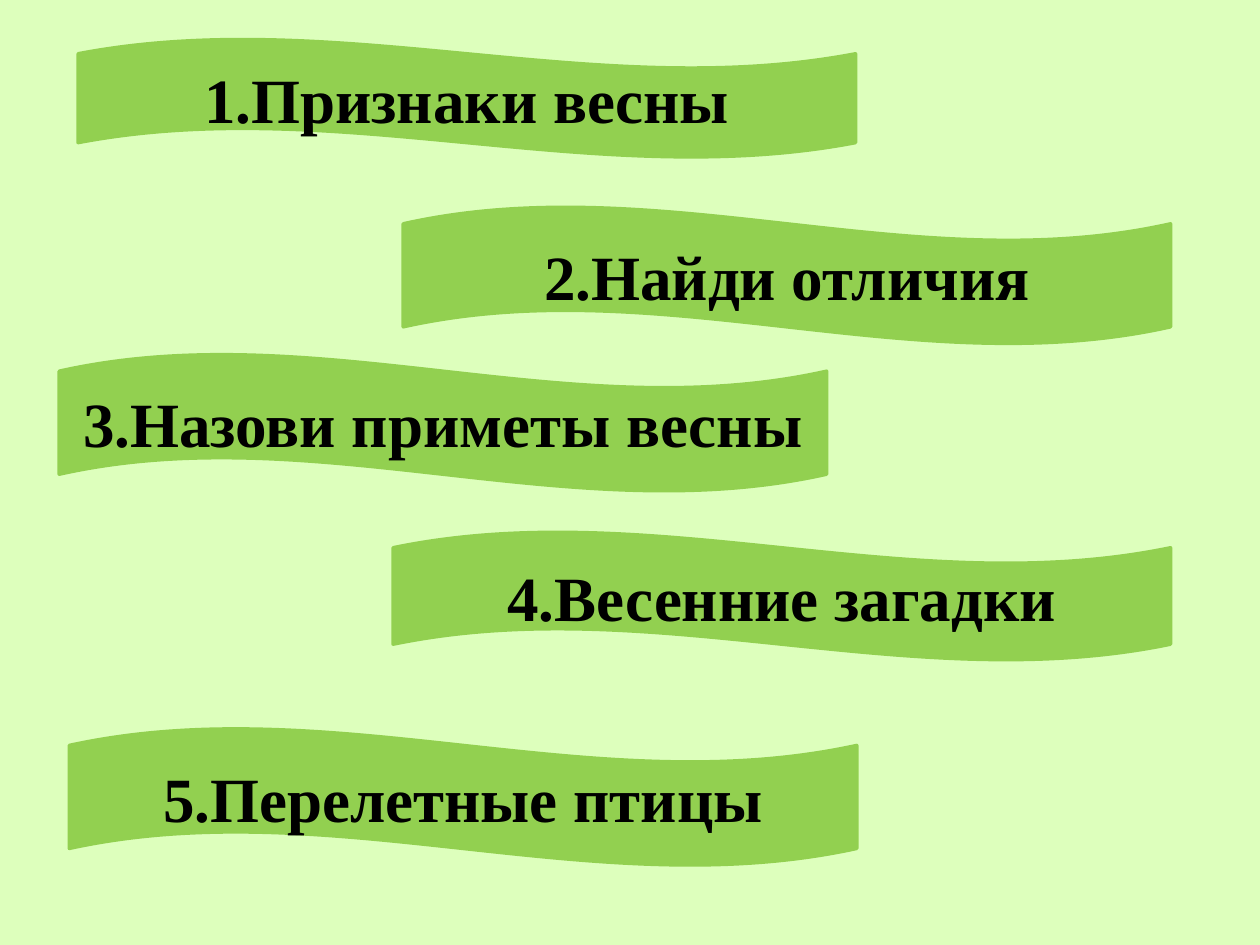
"""Builds a slide listing five spring activities on wavy green ribbons."""
from dataclasses import dataclass

from pptx import Presentation
from pptx.dml.color import RGBColor
from pptx.enum.shapes import MSO_SHAPE
from pptx.enum.text import MSO_ANCHOR, PP_ALIGN
from pptx.slide import Slide
from pptx.util import Inches, Pt

BACKGROUND = "DDFFBC"
RIBBON_GREEN = "92D050"
TEXT_BLACK = "000000"


@dataclass(frozen=True)
class Activity:
    title: str
    left: float
    top: float
    width: float
    height: float


ACTIVITIES = [
    Activity("Признаки весны", 0.62, 0.31, 6.17, 0.94),
    Activity("Найди отличия", 3.2, 1.64, 6.09, 1.09),
    Activity("Назови приметы весны", 0.47, 2.81, 6.09, 1.09),
    Activity("Весенние загадки", 3.12, 4.22, 6.17, 1.02),
    Activity("Перелетные птицы", 0.55, 5.78, 6.25, 1.09),
]


def paint(color_format, hex_color: str) -> None:
    color_format.rgb = RGBColor.from_string(hex_color)


def draw_ribbon(slide: Slide, number: int, activity: Activity) -> None:
    ribbon = slide.shapes.add_shape(
        MSO_SHAPE.WAVE,
        Inches(activity.left),
        Inches(activity.top),
        Inches(activity.width),
        Inches(activity.height),
    )
    ribbon.shadow.inherit = False
    ribbon.fill.solid()
    paint(ribbon.fill.fore_color, RIBBON_GREEN)
    ribbon.line.width = Pt(2)
    paint(ribbon.line.color, RIBBON_GREEN)

    caption = ribbon.text_frame
    caption.word_wrap = True
    caption.vertical_anchor = MSO_ANCHOR.MIDDLE
    heading = caption.paragraphs[0]
    heading.text = f"{number}.{activity.title}"
    heading.alignment = PP_ALIGN.CENTER
    heading.font.name = "Times New Roman"
    heading.font.size = Pt(36)
    heading.font.bold = True
    paint(heading.font.color, TEXT_BLACK)


def main() -> None:
    presentation = Presentation()
    presentation.slide_width = Inches(10)
    presentation.slide_height = Inches(7.5)
    slide = presentation.slides.add_slide(presentation.slide_layouts[6])
    slide.background.fill.solid()
    paint(slide.background.fill.fore_color, BACKGROUND)
    for number, activity in enumerate(ACTIVITIES, start=1):
        draw_ribbon(slide, number, activity)
    presentation.save("out.pptx")


if __name__ == "__main__":
    main()
